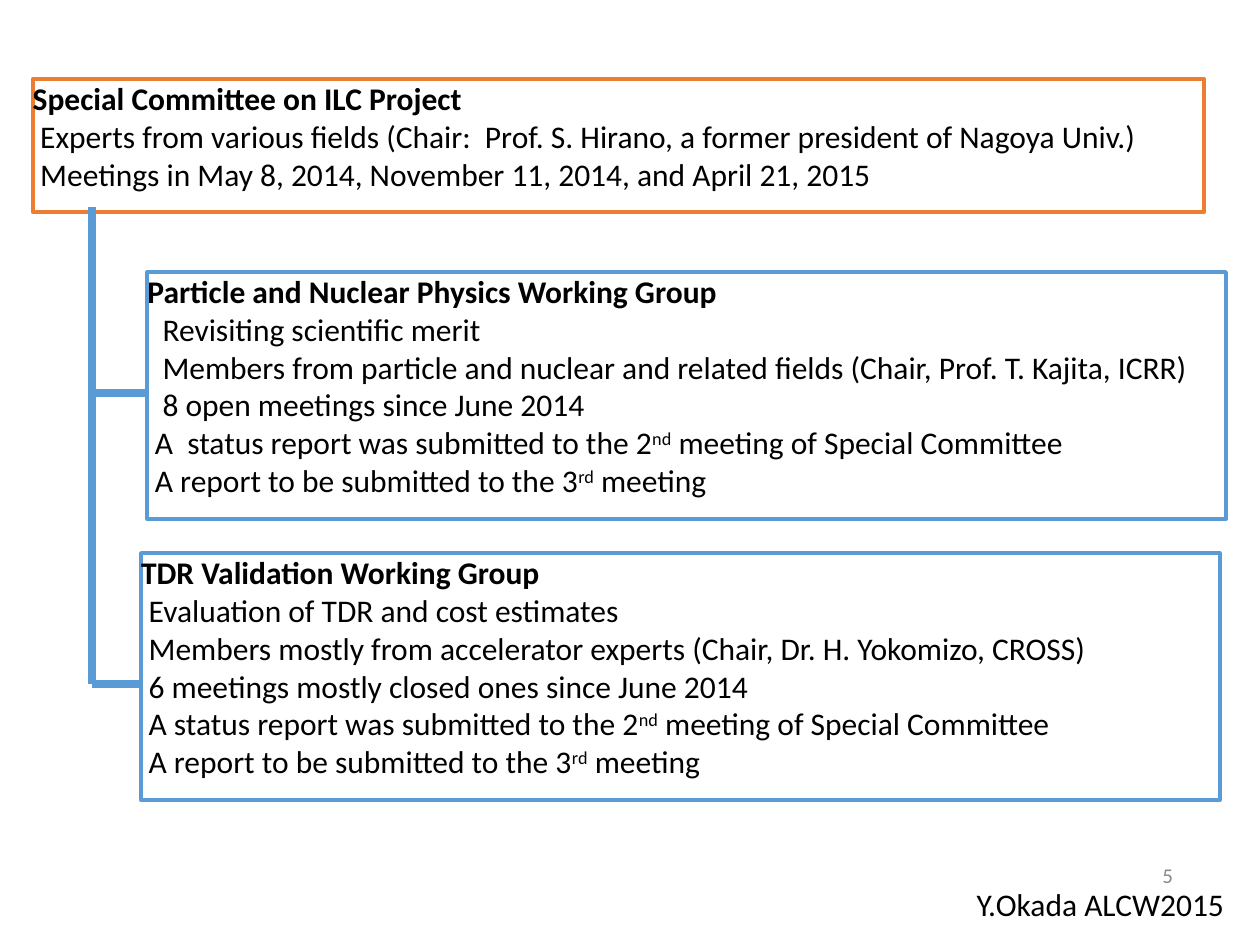
import pptx
import pptx.util
import pptx.dml.color
import pptx.enum.shapes
import pptx.enum.text
import pptx.oxml.ns
from lxml import etree

Inches = pptx.util.Inches
Pt = pptx.util.Pt
ALIGN = pptx.enum.text.PP_ALIGN
ANCHOR = pptx.enum.text.MSO_ANCHOR

BLUE = "5B9BD5"
ORANGE = "ED7D31"
STEP = 0.06  # one level of line indent

# Lines after each title: (indent level, text); ^ marks raised text
PANEL = [
    (1, "Experts from various fields (Chair:  Prof. S. Hirano, "
        "a former president of Nagoya Univ.)"),
    (1, "Meetings in May 8, 2014, November 11, 2014, and April 21, 2015"),
]
REPORT = (1, "A report to be submitted to the 3^rd^ meeting")
PHYSICS = [
    (2, "Revisiting scientific merit"),
    (2, "Members from particle and nuclear and related fields "
        "(Chair, Prof. T. Kajita, ICRR)"),
    (2, "8 open meetings since June 2014"),
    (1, "A  status report was submitted to the 2^nd^ meeting of Special Committee"),
    REPORT,
]
DESIGN = [
    (1, "Evaluation of TDR and cost estimates"),
    (1, "Members mostly from accelerator experts (Chair, Dr. H. Yokomizo, CROSS)"),
    (1, "6 meetings mostly closed ones since June 2014"),
    (1, "A status report was submitted to the 2^nd^ meeting of Special Committee"),
    REPORT,
]


def color(code):
    return pptx.dml.color.RGBColor.from_string(code)


def write(para, text, size=18, bold=False, ink="000000", align=ALIGN.LEFT, level=0):
    """Fill a paragraph; parts between ^ marks are superscript."""
    para.alignment = align
    if level:
        props = para._p.get_or_add_pPr()
        props.set("marL", str(Inches(level * STEP)))
        props.set("indent", "0")
    for num, part in enumerate(text.split("^")):
        run = para.add_run()
        run.text = part
        font = run.font
        font.name, font.size, font.bold = "Calibri", Pt(size), bold
        font.color.rgb = color(ink)
        if num % 2:
            run._r.get_or_add_rPr().set("baseline", "30000")


def setup(frame, anchor=ANCHOR.TOP, wrap=True):
    frame.margin_left = frame.margin_right = 0
    frame.margin_top = frame.margin_bottom = 0
    frame.vertical_anchor = anchor
    frame.word_wrap = wrap


def box(slide, area, edge, title, lines):
    """Outlined panel with a bold title and indented lines."""
    shape = slide.shapes.add_shape(
        pptx.enum.shapes.MSO_SHAPE.RECTANGLE, *map(Inches, area))
    shape.shadow.inherit = False
    shape.fill.solid()
    shape.fill.fore_color.rgb = color("FFFFFF")
    shape.line.color.rgb = color(edge)
    shape.line.width = Pt(2.25)
    frame = shape.text_frame
    setup(frame)
    write(frame.paragraphs[0], title, bold=True)
    for level, text in lines:
        write(frame.add_paragraph(), text, level=level)


def link(slide, *ends):
    line = slide.shapes.add_connector(
        pptx.enum.shapes.MSO_CONNECTOR.STRAIGHT, *map(Inches, ends))
    line.line.color.rgb = color(BLUE)
    line.line.width = Pt(4.5)
    etree.SubElement(line._element.spPr, pptx.oxml.ns.qn("a:effectLst"))


def label(slide, area, text, anchor=ANCHOR.TOP, wrap=True, **style):
    frame = slide.shapes.add_textbox(*map(Inches, area)).text_frame
    setup(frame, anchor, wrap)
    write(frame.paragraphs[0], text, **style)


def main():
    deck = pptx.Presentation()
    deck.slide_width, deck.slide_height = Inches(10), Inches(7.5)
    slide = deck.slides.add_slide(deck.slide_layouts[6])

    # Page number
    label(slide, (7.06, 6.8, 2.25, 0.29), "5", anchor=ANCHOR.MIDDLE,
          size=12, ink="888888", align=ALIGN.RIGHT)

    # Committee and its two working groups
    box(slide, (0.26, 0.63, 9.3, 1.05), ORANGE,
        "Special Committee on ILC Project", PANEL)
    box(slide, (1.17, 2.16, 8.56, 1.96), BLUE,
        "Particle and Nuclear Physics Working Group", PHYSICS)
    box(slide, (1.12, 4.39, 8.56, 1.96), BLUE,
        "TDR Validation Working Group", DESIGN)

    # Trunk and branches
    trunk, foot = 0.73, 5.43
    link(slide, trunk, 1.64, trunk, foot)
    for left, mid in ((1.17, 3.12), (1.12, foot)):
        link(slide, trunk, mid, left, mid)

    # Footer
    label(slide, (7.75, 7.02, 2.08, 0.41), "Y.Okada ALCW2015", wrap=False)
    deck.save("out.pptx")


if __name__ == "__main__":
    main()
